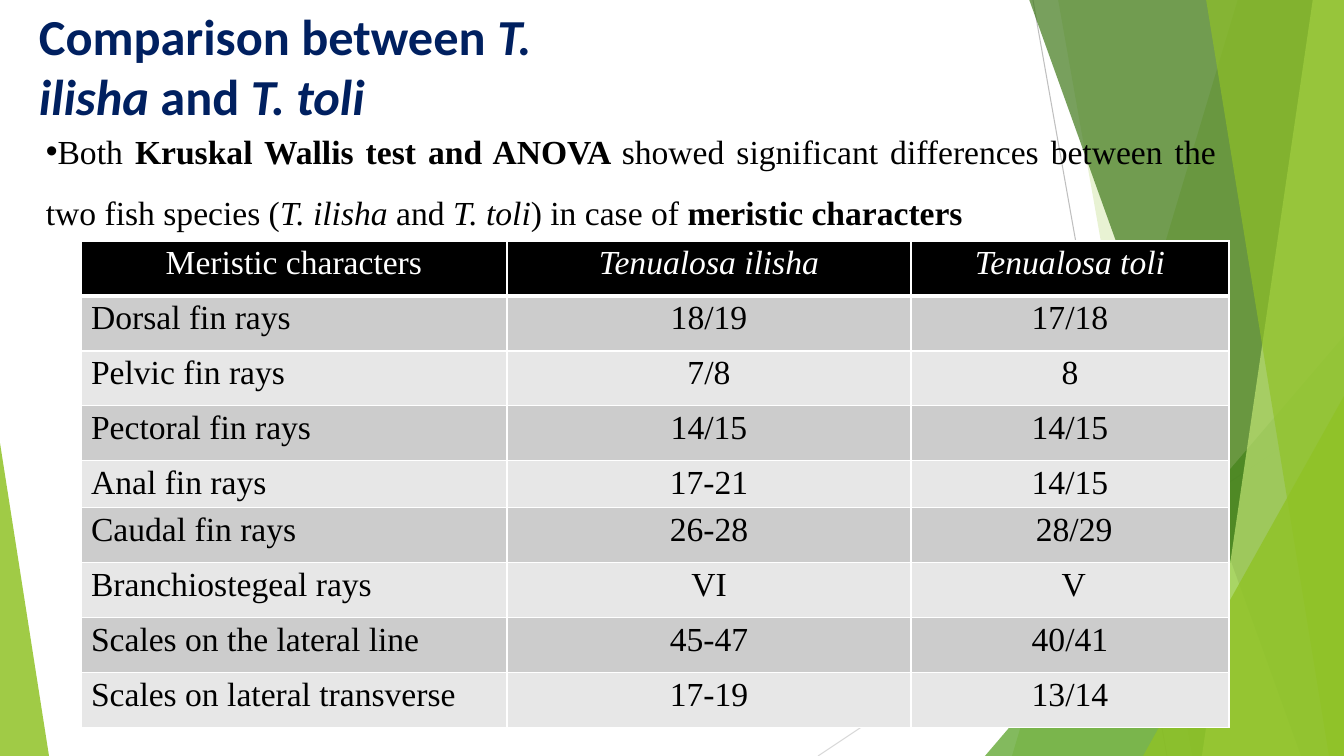
from dataclasses import dataclass

from lxml import etree
from pptx import Presentation
from pptx.dml.color import RGBColor
from pptx.enum import shapes, text
from pptx.oxml.ns import qn
from pptx import util as u

EMU_PER_PX = 914400 / 100.8
WIDTH, HEIGHT = 1344, 756


@dataclass(frozen=True)
class Theme:
    lime: str = "90C226"
    pale_lime: str = "C0E474"
    green: str = "54A021"
    dark_green: str = "3F7819"
    navy: str = "002060"
    black: str = "000000"
    white: str = "FFFFFF"
    odd_row: str = "CCCCCC"
    even_row: str = "E7E7E7"
    heading_font: str = "Calibri"
    body_font: str = "Times New Roman"
    heading_size: int = 36
    body_size: int = 24


THEME = Theme()

ROWS = [
    ("Meristic characters", "Tenualosa ilisha", "Tenualosa toli"),
    ("Dorsal fin rays", "18/19", "17/18"),
    ("Pelvic fin rays", "7/8", "8"),
    ("Pectoral fin rays", "14/15", "14/15"),
    ("Anal fin rays", "17-21", "14/15"),
    ("Caudal fin rays", "26-28", " 28/29"),
    ("Branchiostegeal rays", "VI", " V"),
    ("Scales on the lateral line", "45-47", "40/41"),
    ("Scales on lateral transverse", "17-19", "13/14"),
]
COLUMN_WIDTHS = (426, 404, 318)
ROW_HEIGHT, ANAL_ROW, ANAL_ROW_HEIGHT = 55, 4, 47


def px(*lengths):
    return [u.Emu(round(length * EMU_PER_PX)) for length in lengths]


def paint(shape, colour, opacity):
    """Fill a shape with a translucent colour, with no outline or shadow."""
    shape.shadow.inherit = False
    shape.line.fill.background()
    shape.fill.solid()
    shape.fill.fore_color.rgb = RGBColor.from_string(colour)
    solid = shape.element.spPr.find(qn("a:solidFill"))
    etree.SubElement(solid[0], qn("a:alpha"), val=str(opacity * 1000))


def add_ray(slide, start, end, colour):
    ray = slide.shapes.add_connector(
        shapes.MSO_CONNECTOR.STRAIGHT, *px(*start, *end))
    ray.line.color.rgb = RGBColor.from_string(colour)
    ray.line.width = u.Pt(0.75)
    etree.SubElement(ray.element.spPr, qn("a:effectLst"))


def add_facet(slide, top_left, bottom_left, colour, opacity):
    """Draw a full-height facet that reaches the right edge of the slide."""
    builder = slide.shapes.build_freeform(top_left, -1, scale=EMU_PER_PX)
    builder.add_line_segments(
        [(WIDTH, -1), (WIDTH, HEIGHT), (bottom_left, HEIGHT)], close=True)
    paint(builder.convert_to_shape(), colour, opacity)


def add_corner(slide, left, top, width, apex, colour, opacity):
    """Draw a triangle standing on the bottom edge; apex 0 is left, 1 right."""
    corner = slide.shapes.add_shape(
        shapes.MSO_SHAPE.ISOSCELES_TRIANGLE,
        *px(left, top, width, HEIGHT - top))
    corner.adjustments[0] = apex
    paint(corner, colour, opacity)


def add_backdrop(slide):
    add_ray(slide, (1033, 0), (1167, HEIGHT), "BFBFBF")
    add_ray(slide, (WIDTH, 406), (818, HEIGHT), "D9D9D9")
    add_facet(slide, 1238, 1012, THEME.lime, 30)
    add_facet(slide, 1058, 1192, THEME.lime, 20)
    add_corner(slide, 985, 336, 359, 1, THEME.green, 72)
    add_facet(slide, 1029, 1301, THEME.dark_green, 70)
    add_facet(slide, 1313, 1202, THEME.pale_lime, 70)
    add_facet(slide, 1206, 1329, THEME.lime, 65)
    add_corner(slide, 1143, 396, 201, 1, THEME.lime, 80)
    add_corner(slide, 0, 443, 49, 0, THEME.lime, 85)


def style_run(run, font, size, colour, bold=False, italic=False):
    run.font.name = font
    run.font.size = u.Pt(size)
    run.font.color.rgb = RGBColor.from_string(colour)
    run.font.bold = bold
    run.font.italic = italic


def add_text(slide, box, pieces, font, size, colour):
    """Add one paragraph of (wording, bold, italic) pieces and return it."""
    frame = slide.shapes.add_textbox(*px(*box)).text_frame
    frame.word_wrap = True
    frame.auto_size = text.MSO_AUTO_SIZE.SHAPE_TO_FIT_TEXT
    paragraph = frame.paragraphs[0]
    for wording, bold, italic in pieces:
        run = paragraph.add_run()
        run.text = wording
        style_run(run, font, size, colour, bold, italic)
    return paragraph


def add_title(slide):
    add_text(slide, (29, 0, 620, 71), [
        ("Comparison between ", True, False),
        ("T. ilisha", True, True),
        (" and ", True, False),
        ("T. toli", True, True),
    ], THEME.heading_font, THEME.heading_size, THEME.navy)


def add_finding(slide):
    paragraph = add_text(slide, (36, 106, 1190, 127), [
        ("Both ", False, False),
        ("Kruskal Wallis test and ANOVA ", True, False),
        ("showed significant differences between the two fish species (",
         False, False),
        ("T. ilisha ", False, True),
        ("and ", False, False),
        ("T. toli", False, True),
        (") in case of ", False, False),
        ("meristic characters", True, False),
    ], THEME.body_font, THEME.body_size, THEME.black)
    paragraph.alignment = text.PP_ALIGN.JUSTIFY
    paragraph.line_spacing = 1.5
    paragraph.space_before = paragraph.space_after = u.Pt(6)
    properties = paragraph._p.get_or_add_pPr()
    etree.SubElement(properties, qn("a:buFont"), typeface="Arial")
    etree.SubElement(properties, qn("a:buChar"), char="•")


def add_borders(cell, row_index):
    """Rule a cell in white, with a heavy line under the header."""
    heavy_side = {0: "lnB", 1: "lnT"}.get(row_index)
    properties = cell._tc.get_or_add_tcPr()
    for side in ("lnL", "lnR", "lnT", "lnB"):
        points = 3 if side == heavy_side else 1
        line = etree.SubElement(
            properties, qn(f"a:{side}"), w=str(u.Pt(points)))
        solid = etree.SubElement(line, qn("a:solidFill"))
        etree.SubElement(solid, qn("a:srgbClr"), val=THEME.white)


def fill_cell(cell, wording, row_index, column_index):
    header = row_index == 0
    add_borders(cell, row_index)
    cell.fill.solid()
    band = THEME.odd_row if row_index % 2 else THEME.even_row
    cell.fill.fore_color.rgb = RGBColor.from_string(
        THEME.black if header else band)
    cell.margin_top, cell.margin_bottom = px(4, 4)
    cell.text_frame.text = wording
    paragraph = cell.text_frame.paragraphs[0]
    centred = header or column_index > 0
    paragraph.alignment = (
        text.PP_ALIGN.CENTER if centred else text.PP_ALIGN.LEFT)
    style_run(paragraph.runs[0], THEME.body_font, THEME.body_size,
              THEME.white if header else THEME.black,
              italic=header and column_index > 0)


def add_character_table(slide):
    heights = [ROW_HEIGHT] * len(ROWS)
    heights[ANAL_ROW] = ANAL_ROW_HEIGHT
    table = slide.shapes.add_table(
        len(ROWS), len(COLUMN_WIDTHS),
        *px(81, 241, sum(COLUMN_WIDTHS), sum(heights))).table
    table.first_row = table.horz_banding = False
    for column, width in zip(table.columns, px(*COLUMN_WIDTHS)):
        column.width = width
    for row_index, (row, height) in enumerate(zip(table.rows, px(*heights))):
        row.height = height
        for column_index, wording in enumerate(ROWS[row_index]):
            fill_cell(row.cells[column_index], wording,
                      row_index, column_index)


def main():
    presentation = Presentation()
    presentation.slide_width, presentation.slide_height = px(WIDTH, HEIGHT)
    slide = presentation.slides.add_slide(presentation.slide_layouts[6])
    add_backdrop(slide)
    add_character_table(slide)
    add_title(slide)
    add_finding(slide)
    presentation.save("out.pptx")


if __name__ == "__main__":
    main()
